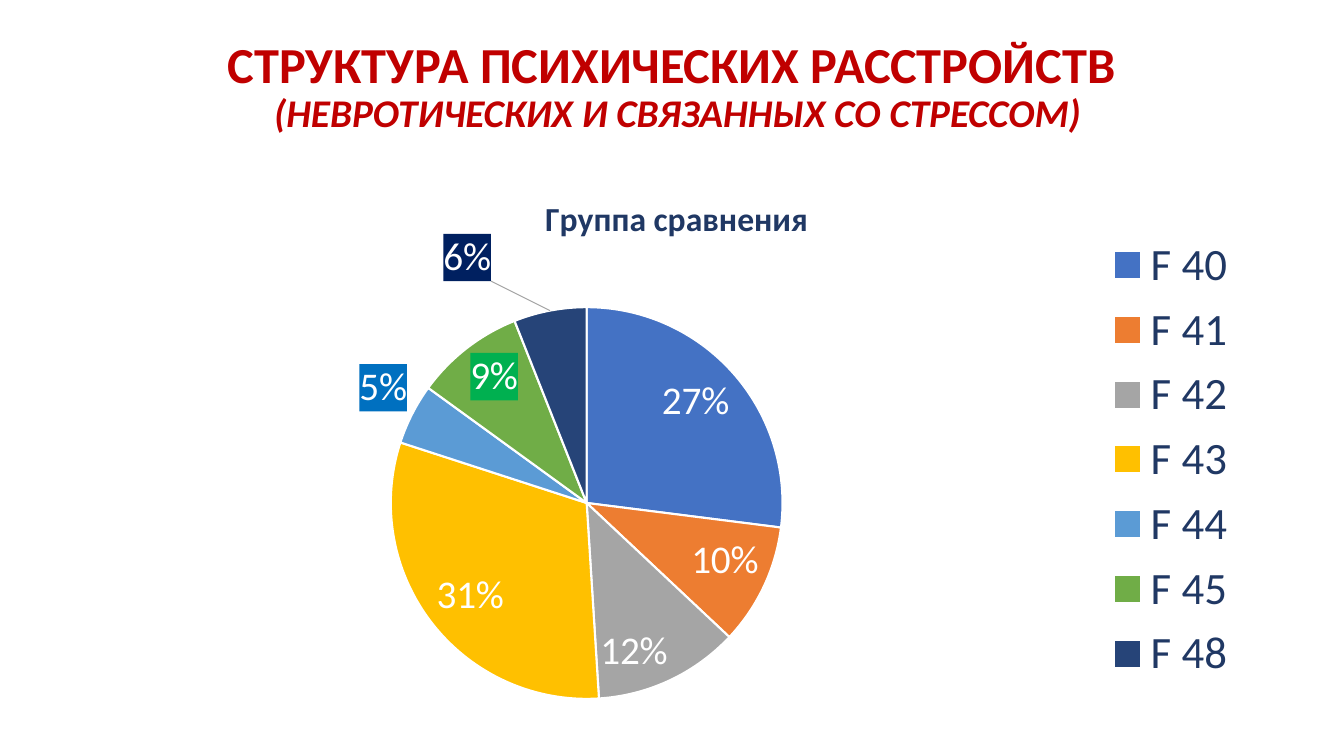
"""Build a slide with a pie chart of the structure of mental disorders."""
from dataclasses import dataclass

from lxml import etree
from pptx import Presentation
from pptx.chart.data import CategoryChartData
from pptx.dml.color import RGBColor
from pptx.enum.chart import XL_CHART_TYPE, XL_LABEL_POSITION, XL_LEGEND_POSITION
from pptx.enum.text import MSO_ANCHOR, MSO_AUTO_SIZE, PP_ALIGN
from pptx.oxml import parse_xml
from pptx.util import Emu, Pt

PIE = XL_CHART_TYPE.PIE
LEGEND_RIGHT = XL_LEGEND_POSITION.RIGHT
INSIDE = XL_LABEL_POSITION.INSIDE_END
OUTSIDE = XL_LABEL_POSITION.OUTSIDE_END
CENTER = PP_ALIGN.CENTER
MIDDLE = MSO_ANCHOR.MIDDLE
NO_AUTOFIT = MSO_AUTO_SIZE.NONE
TITLE_ONLY = 5

FONT = "Calibri"
RED = RGBColor(0xC0, 0x00, 0x00)
NAVY = RGBColor(0x20, 0x38, 0x64)
WHITE = RGBColor(0xFF, 0xFF, 0xFF)
BLACK = RGBColor(0x00, 0x00, 0x00)
LEADER_GRAY = RGBColor(0xA6, 0xA6, 0xA6)

NAMESPACES = (
    'xmlns:c="http://schemas.openxmlformats.org/drawingml/2006/chart" '
    'xmlns:a="http://schemas.openxmlformats.org/drawingml/2006/main"'
)


@dataclass(frozen=True)
class Slice:
    name: str
    value: int
    color: RGBColor


@dataclass(frozen=True)
class Callout:
    index: int
    fill: RGBColor
    position: int
    shift: tuple[float, float] | None = None


SLICES = [
    Slice("F 40", 27, RGBColor(0x44, 0x72, 0xC4)),
    Slice("F 41", 10, RGBColor(0xED, 0x7D, 0x31)),
    Slice("F 42", 12, RGBColor(0xA5, 0xA5, 0xA5)),
    Slice("F 43", 31, RGBColor(0xFF, 0xC0, 0x00)),
    Slice("F 44", 5, RGBColor(0x5B, 0x9B, 0xD5)),
    Slice("F 45", 9, RGBColor(0x70, 0xAD, 0x47)),
    Slice("F 48", 6, RGBColor(0x26, 0x44, 0x78)),
]
CALLOUTS = [
    Callout(4, RGBColor(0x00, 0x70, 0xC0), OUTSIDE),
    Callout(5, RGBColor(0x00, 0xB0, 0x50), INSIDE),
    Callout(6, RGBColor(0x00, 0x20, 0x60), OUTSIDE, (-0.05, -0.04)),
]


def px(length: int) -> Emu:
    """Turn pixels into EMU."""
    return Emu(round(length * 914400 / 100.8))


def style(font, size: int, color: RGBColor, bold: bool = False, italic: bool = False) -> None:
    """Set the face, size and colour of a font."""
    font.name = FONT
    font.size = Pt(size)
    font.bold = bold
    font.italic = italic
    font.color.rgb = color


def set_layout(parent: etree.ElementBase, place: int, **parts: float | str) -> None:
    """Give a chart part a manual layout at its place among the children."""
    for old in parent.xpath("c:layout"):
        parent.remove(old)
    items = "".join(f'<c:{name} val="{value}"/>' for name, value in parts.items())
    parent.insert(place, parse_xml(
        f"<c:layout {NAMESPACES}><c:manualLayout>{items}</c:manualLayout></c:layout>"))


def add_title(page) -> None:
    """Fill the title placeholder with its two lines."""
    box = page.shapes.title
    box.left, box.top, box.width, box.height = px(98), px(18), px(1159), px(140)
    frame = box.text_frame
    frame.auto_size = NO_AUTOFIT
    frame.vertical_anchor = MIDDLE
    para = frame.paragraphs[0]
    para.alignment = CENTER
    para.line_spacing = 0.9
    span = para.add_run()
    span.text = "СТРУКТУРА ПСИХИЧЕСКИХ РАССТРОЙСТВ "
    style(span.font, 36, RED, bold=True)
    para.add_line_break()
    span = para.add_run()
    span.text = "(НЕВРОТИЧЕСКИХ И СВЯЗАННЫХ СО СТРЕССОМ)"
    style(span.font, 28, RED, bold=True, italic=True)


def add_callout(series, callout: Callout) -> None:
    """Give one slice a filled percentage label of its own."""
    label = series.points[callout.index].data_label
    style(label.font, 28, WHITE)
    label.position = callout.position
    node = series._element.xpath(f"c:dLbls/c:dLbl[c:idx/@val='{callout.index}']")[0]
    node.xpath("c:showVal")[0].set("val", "0")
    node.xpath("c:showPercent")[0].set("val", "1")
    for old in node.xpath("c:spPr"):
        node.remove(old)
    node.xpath("c:txPr")[0].addprevious(parse_xml(
        f'<c:spPr {NAMESPACES}><a:solidFill><a:srgbClr val="{callout.fill}"/>'
        "</a:solidFill></c:spPr>"))
    if callout.shift:
        set_layout(node, 1, x=callout.shift[0], y=callout.shift[1])


def add_labels(series) -> None:
    """Show percentages on the slices, with leader lines."""
    labels = series.data_labels
    labels.show_value = False
    labels.show_percentage = True
    labels.number_format = "0%"
    labels.number_format_is_linked = False
    labels.position = INSIDE
    style(labels.font, 28, WHITE)
    for callout in CALLOUTS:
        add_callout(series, callout)
    node = series._element.xpath("c:dLbls")[0]
    for old in node.xpath("c:showLeaderLines | c:leaderLines"):
        node.remove(old)
    node.append(parse_xml(f'<c:showLeaderLines {NAMESPACES} val="1"/>'))
    node.append(parse_xml(
        f'<c:leaderLines {NAMESPACES}><c:spPr><a:ln w="9525"><a:solidFill>'
        f'<a:srgbClr val="{LEADER_GRAY}"/></a:solidFill></a:ln></c:spPr></c:leaderLines>'))


def add_pie(page) -> None:
    """Add the pie chart with its title, legend and labels."""
    data = CategoryChartData()
    data.categories = [part.name for part in SLICES]
    data.add_series("Series 1", [part.value for part in SLICES])
    chart = page.shapes.add_chart(PIE, px(93), px(163), px(1159), px(593), data).chart
    style(chart.font, 10, BLACK)

    chart.has_title = True
    span = chart.chart_title.text_frame.paragraphs[0].add_run()
    span.text = "Группа сравнения"
    style(span.font, 24, NAVY, bold=True)

    chart.has_legend = True
    chart.legend.position = LEGEND_RIGHT
    chart.legend.include_in_layout = False
    style(chart.legend.font, 32, NAVY)

    plot = chart.plots[0]
    plot.vary_by_categories = True
    series = plot.series[0]
    for index, part in enumerate(SLICES):
        wedge = series.points[index].format
        wedge.fill.solid()
        wedge.fill.fore_color.rgb = part.color
        wedge.line.color.rgb = WHITE
        wedge.line.width = Pt(1.5)
    add_labels(series)

    root = chart._chartSpace.xpath("c:chart")[0]
    set_layout(root.xpath("c:title")[0], 1, xMode="edge", yMode="edge", x=0.385, y=0.045)
    set_layout(root.xpath("c:plotArea")[0], 0, layoutTarget="inner", xMode="edge",
               yMode="edge", x=0.257, y=0.243, w=0.338, h=0.661)
    set_layout(root.xpath("c:legend")[0], 1, xMode="edge", yMode="edge",
               x=0.87, y=0.11, w=0.12, h=0.78)


def main() -> None:
    """Build the deck and save it."""
    deck = Presentation()
    deck.slide_width, deck.slide_height = px(1344), px(756)
    page = deck.slides.add_slide(deck.slide_layouts[TITLE_ONLY])
    add_title(page)
    add_pie(page)
    deck.save("out.pptx")


if __name__ == "__main__":
    main()
